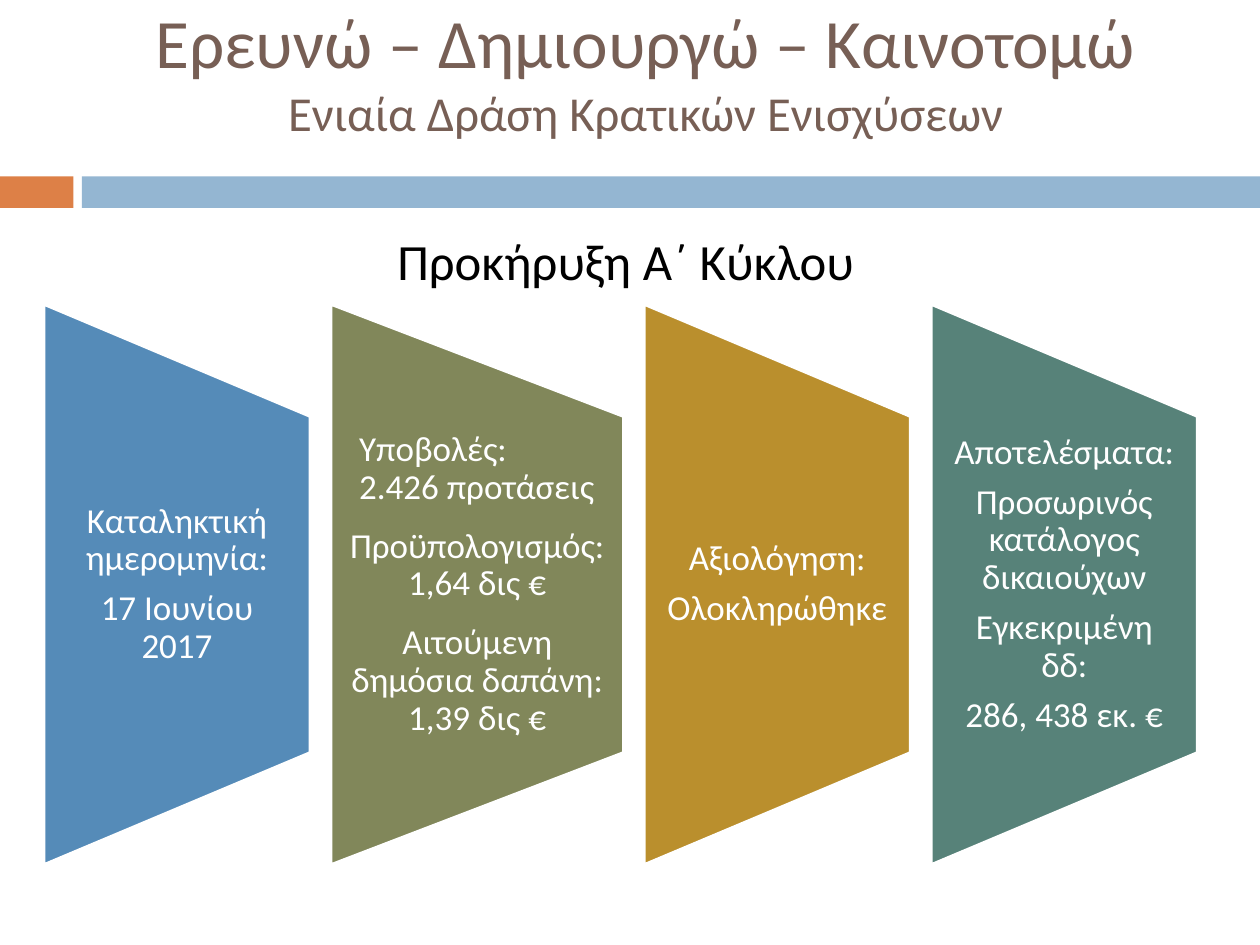
"""Build the slide on the first call of the single state aid action."""
from pptx import Presentation
from pptx.dml.color import RGBColor
from pptx.enum.shapes import MSO_SHAPE
from pptx.enum.text import MSO_ANCHOR, PP_ALIGN
from pptx.util import Pt

RECTANGLE = MSO_SHAPE.RECTANGLE
TRAPEZOID = MSO_SHAPE.FLOWCHART_MANUAL_OPERATION
TOP, MIDDLE = MSO_ANCHOR.TOP, MSO_ANCHOR.MIDDLE
LEFT, CENTER = PP_ALIGN.LEFT, PP_ALIGN.CENTER

FONT = "Calibri"
WHITE = RGBColor(0xFF, 0xFF, 0xFF)
BLACK = RGBColor(0x00, 0x00, 0x00)
BROWN = RGBColor(0x77, 0x5F, 0x55)
ORANGE = RGBColor(0xDD, 0x80, 0x47)
PALE_BLUE = RGBColor(0x94, 0xB6, 0xD2)
BLUE = RGBColor(0x55, 0x8B, 0xB8)
OLIVE = RGBColor(0x81, 0x87, 0x5A)
GOLD = RGBColor(0xBA, 0x8F, 0x2D)
TEAL = RGBColor(0x57, 0x82, 0x79)

TITLE = "Ερευνώ – Δημιουργώ – Καινοτομώ"
SUBTITLE = "Ενιαία Δράση Κρατικών Ενισχύσεων"
HEADING = "Προκήρυξη Α΄ Κύκλου"
BANDS = [(0, 42, ORANGE), (46.8, 673.2, PALE_BLUE)]
STAGES = [
    dict(color=BLUE, width=152, after=7,
         lines=["Καταληκτική ημερομηνία:", "17 Ιουνίου 2017"]),
    dict(color=OLIVE, width=167, after=12, first_indent=6,
         lines=["Υποβολές:\v2.426 προτάσεις",
                "Προϋπολογισμός:\v1,64 δις €",
                "Αιτούμενη δημόσια δαπάνη:\v1,39 δις €"]),
    dict(color=GOLD, width=152, after=7,
         lines=["Αξιολόγηση:", "Ολοκληρώθηκε"]),
    dict(color=TEAL, width=152, after=7,
         lines=["Αποτελέσματα:", "Προσωρινός κατάλογος δικαιούχων",
                "Εγκεκριμένη δδ:", "286, 438 εκ. €"]),
]
STAGE_LEFT, STAGE_GAP, STAGE_MIDDLE = 25.2, 12, 334
STAGE_HEIGHT, LABEL_HEIGHT = 320, 192


def add_block(page, kind, left, top, width, height, color):
    """Add a filled shape without outline or shadow."""
    block = page.shapes.add_shape(kind, Pt(left), Pt(top), Pt(width), Pt(height))
    block.shadow.inherit = False
    block.fill.solid()
    block.fill.fore_color.rgb = color
    block.line.fill.background()
    return block


def add_text(page, lines, left, top, width, height, *, sizes, color,
             anchor=MIDDLE, insets=(7.2, 3.6, 7.2, 3.6), spacing=1.0,
             before=0, after=0, first_indent=0):
    """Add a wrapped text box with one paragraph per line."""
    box = page.shapes.add_textbox(Pt(left), Pt(top), Pt(width), Pt(height))
    frame = box.text_frame
    frame.word_wrap = True
    frame.vertical_anchor = anchor
    (frame.margin_left, frame.margin_top,
     frame.margin_right, frame.margin_bottom) = map(Pt, insets)
    frame.text = "\n".join(lines)
    for para, size in zip(frame.paragraphs, sizes):
        para.alignment = CENTER
        para.line_spacing = spacing
        para.space_before, para.space_after = Pt(before), Pt(after)
        para.font.size = Pt(size)
        for span in para.runs:
            span.font.name = FONT
            span.font.size = Pt(size)
            span.font.color.rgb = color
    if first_indent:
        opening = frame.paragraphs[0]
        opening.alignment = LEFT
        opening._p.get_or_add_pPr().set("marL", str(Pt(first_indent)))


def add_stage(page, left, stage):
    """Add one sideways trapezoid with its upright label."""
    width = stage["width"]
    block = add_block(page, TRAPEZOID,
                      left + (width - STAGE_HEIGHT) / 2, STAGE_MIDDLE - width / 2,
                      STAGE_HEIGHT, width, stage["color"])
    block.rotation = 270
    block.line.color.rgb = WHITE
    block.line.width = Pt(1.5)
    add_text(page, stage["lines"], left, STAGE_MIDDLE - LABEL_HEIGHT / 2,
             width, LABEL_HEIGHT, sizes=[20] * len(stage["lines"]), color=WHITE,
             insets=(10, 0, 10, 0), spacing=0.9, after=stage["after"],
             first_indent=stage.get("first_indent", 0))


def main():
    """Assemble and save the deck."""
    deck = Presentation()
    deck.slide_width, deck.slide_height = Pt(720), Pt(540)
    page = deck.slides.add_slide(deck.slide_layouts[6])
    for left, width, color in BANDS:
        add_block(page, RECTANGLE, left, 100.8, width, 18, color)
    add_text(page, [TITLE, SUBTITLE], 48, 18, 642, 78, sizes=[39.6, 27.9],
             color=BROWN, insets=(7.2, 3.6, 7.2, 37.6))
    add_text(page, [HEADING], 36.7, 128, 642, 354, sizes=[29], color=BLACK,
             anchor=TOP, before=7)
    left = STAGE_LEFT
    for stage in STAGES:
        add_stage(page, left, stage)
        left += stage["width"] + STAGE_GAP
    deck.save("out.pptx")


if __name__ == "__main__":
    main()
